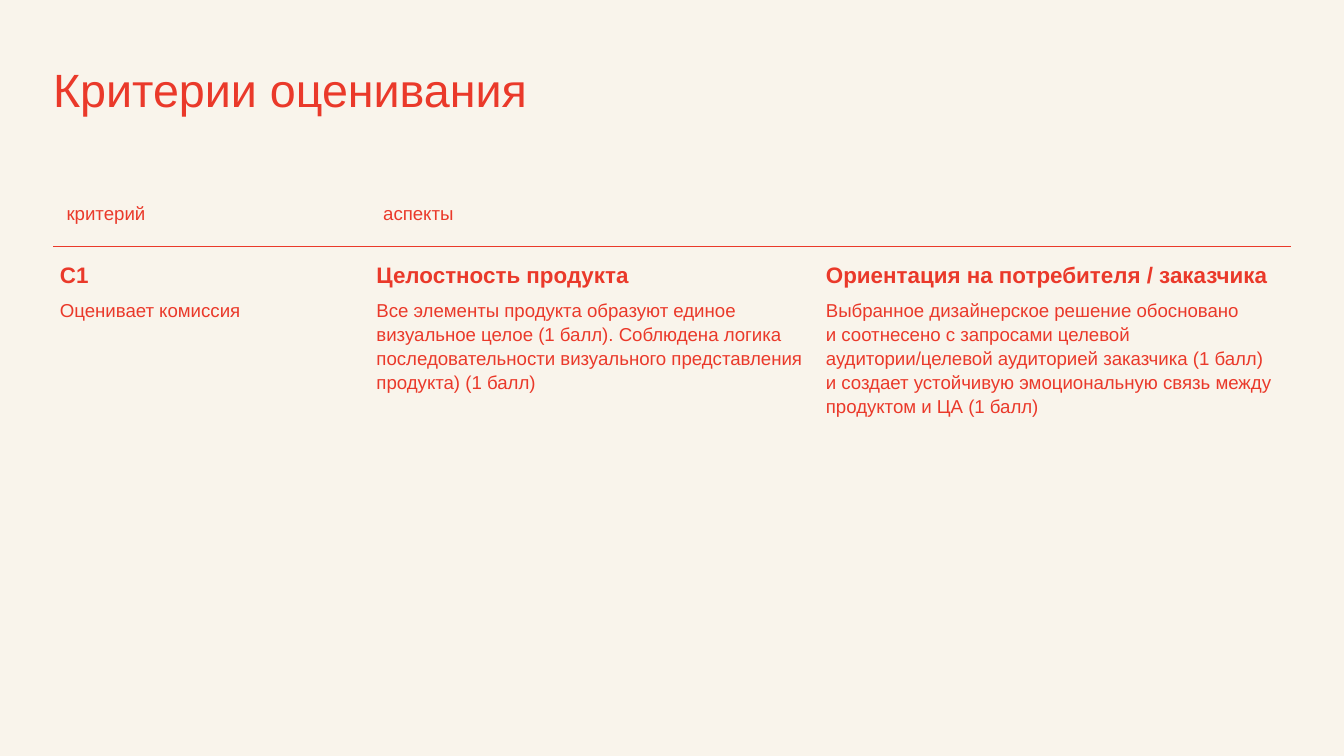
from copy import deepcopy

from lxml.etree import SubElement
from pptx import Presentation
from pptx.dml.color import RGBColor
from pptx.oxml import parse_xml
from pptx.oxml.ns import nsdecls, qn
from pptx.util import Pt

COLORS = {"background": "F9F4EB", "accent": "EA392A"}
FONT = "Arial"
LINE_SPACING = 1.15
NO_STYLE_NO_GRID = "{2D5ABB26-0587-4C30-8999-92F81FD0307C}"

TITLE = "Критерии оценивания"
HEADERS = ["критерий", "аспекты"]
CRITERIA = [
    ("С1", "Оценивает комиссия"),
    ("Целостность продукта",
     "Все элементы продукта образуют единое визуальное целое (1 балл). "
     "Соблюдена логика последовательности визуального представления "
     "продукта) (1 балл)"),
    ("Ориентация на потребителя / заказчика",
     "Выбранное дизайнерское решение обосновано\n"
     "и соотнесено с запросами целевой аудитории/целевой аудиторией "
     "заказчика (1 балл)\n"
     "и создает устойчивую эмоциональную связь между продуктом и ЦА (1 балл)"),
]


def set_attributes(target, values):
    for name, value in values.items():
        setattr(target, name, value)


def write_para(para, text, size, bold=False, **spacing):
    para.text = text
    set_attributes(para, spacing)
    for span in para.runs:
        set_attributes(span.font, {"name": FONT, "size": Pt(size), "bold": bold})
        span.font.color.rgb = RGBColor.from_string(COLORS["accent"])
    # Line breaks need the text size too, or they stretch their lines.
    for line_break in para._p.findall(qn("a:br")):
        line_break.insert(0, deepcopy(para.runs[0]._r.rPr))


def set_margins(target, side, vertical):
    set_attributes(target, {
        "margin_left": Pt(side), "margin_right": Pt(side),
        "margin_top": Pt(vertical), "margin_bottom": Pt(vertical)})


def add_bottom_border(cell, width):
    border = parse_xml(f'<a:lnB {nsdecls("a")} w="{Pt(width)}"/>')
    fill = SubElement(border, qn("a:solidFill"))
    SubElement(fill, qn("a:srgbClr"), val=COLORS["accent"])
    cell._tc.get_or_add_tcPr().insert(0, border)


def add_title(page, left, top, width, height):
    box = page.shapes.add_textbox(Pt(left), Pt(top), Pt(width), Pt(height))
    frame = box.text_frame
    frame.word_wrap = True
    set_attributes(frame, {"margin_left": 0, "margin_top": 0})
    write_para(frame.paragraphs[0], TITLE, 25, line_spacing=LINE_SPACING)


def add_criteria_table(page, left, top, column_widths, row_height):
    frame = page.shapes.add_table(
        2, len(column_widths), Pt(left), Pt(top),
        Pt(sum(column_widths)), Pt(2 * row_height))
    table = frame.table
    set_attributes(table, {"first_row": False, "horz_banding": False})
    table._tbl.tblPr.find(qn("a:tableStyleId")).text = NO_STYLE_NO_GRID
    for column, width in zip(table.columns, column_widths):
        column.width = Pt(width)
    for row in table.rows:
        row.height = Pt(row_height)
    for cell in table.iter_cells():
        cell.fill.background()

    header_cells = table.rows[0].cells
    for cell in header_cells:
        set_margins(cell, 7.2, 7.2)
        add_bottom_border(cell, 0.75)
    table.cell(0, 1).merge(table.cell(0, 2))
    for column, text in enumerate(HEADERS):
        write_para(table.cell(0, column).text_frame.paragraphs[0], text, 10)

    for column, (heading, details) in enumerate(CRITERIA):
        cell = table.cell(1, column)
        set_margins(cell, 3.6, 7.2)
        frame = cell.text_frame
        write_para(frame.paragraphs[0], heading, 12, bold=True,
                   line_spacing=LINE_SPACING)
        write_para(frame.add_paragraph(), details, 10,
                   line_spacing=LINE_SPACING, space_before=Pt(5))


def main():
    deck = Presentation()
    set_attributes(deck, {"slide_width": Pt(720), "slide_height": Pt(405)})
    page = deck.slides.add_slide(deck.slide_layouts[6])
    fill = page.background.fill
    fill.solid()
    fill.fore_color.rgb = RGBColor.from_string(COLORS["background"])

    add_title(page, 28.5, 28, 456.5, 34)
    add_criteria_table(page, 28.5, 102, [169.6, 240.8, 252.7], 30)
    deck.save("out.pptx")


if __name__ == "__main__":
    main()
